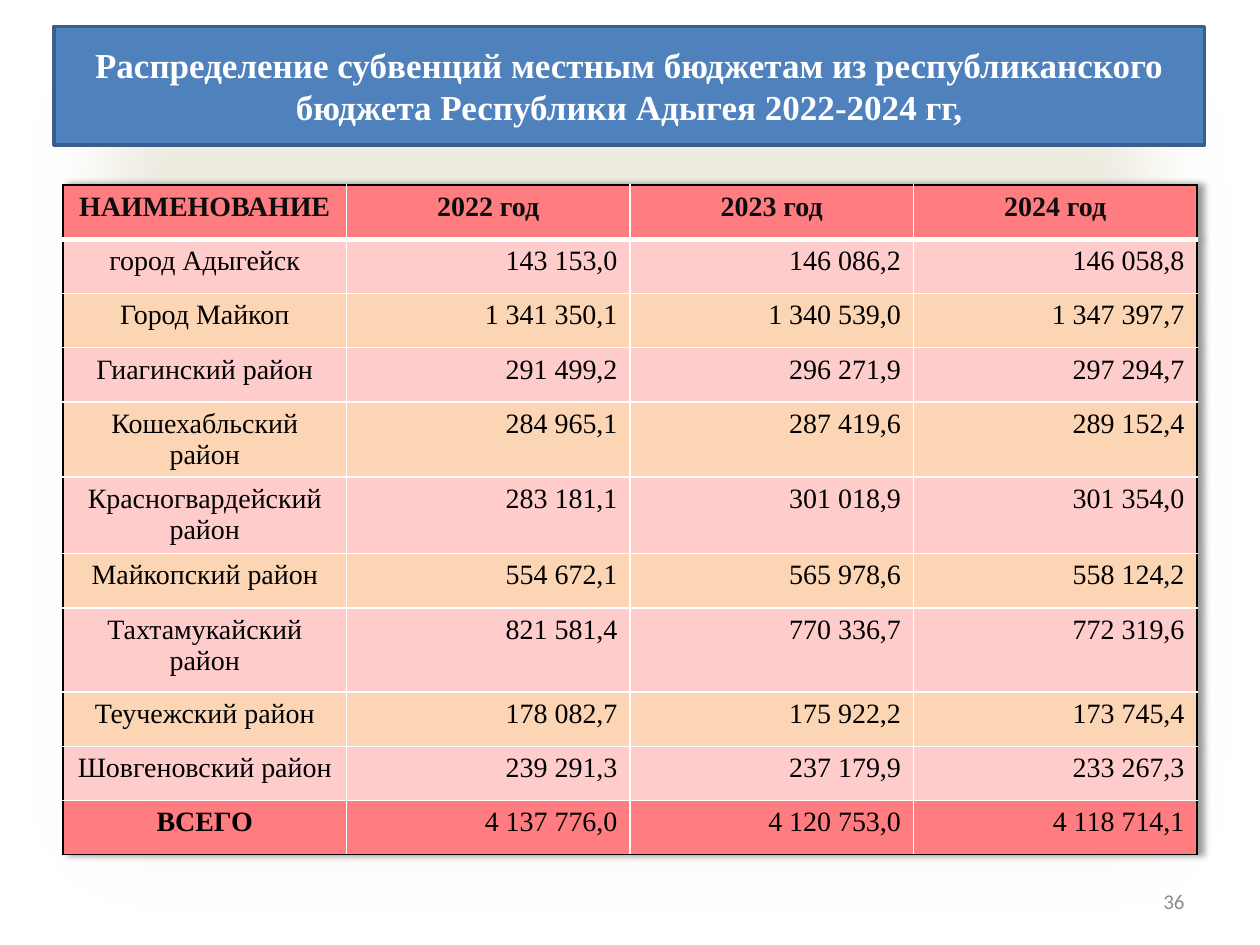
"""Builds the slide on subventions to the local budgets of Adygea, 2022-2024."""
from dataclasses import dataclass

from lxml.etree import SubElement
from pptx import Presentation
from pptx.dml.color import RGBColor
from pptx.enum.shapes import MSO_SHAPE as Preset
from pptx.enum.text import MSO_ANCHOR as Anchor, PP_ALIGN as Align
from pptx.oxml import parse_xml
from pptx.oxml.ns import nsdecls, qn
from pptx.util import Inches, Pt

SERIF = "Times New Roman"
WHITE, BLACK, CORAL, PINK, PEACH = "FFFFFF", "000000", "FF7C80", "FFCCCC", "FCD5B5"
YEARS = (2022, 2023, 2024)
ROW_HEIGHT = 0.43


@dataclass
class Row:
    name: str
    values: tuple[str, ...]
    height: float = ROW_HEIGHT


DISTRICTS = [
    Row("город Адыгейск", ("143 153,0", "146 086,2", "146 058,8")),
    Row("Город Майкоп", ("1 341 350,1", "1 340 539,0", "1 347 397,7")),
    Row("Гиагинский район", ("291 499,2", "296 271,9", "297 294,7")),
    Row("Кошехабльский район", ("284 965,1", "287 419,6", "289 152,4"), 0.57),
    Row("Красногвардейский район", ("283 181,1", "301 018,9", "301 354,0"), 0.61),
    Row("Майкопский район", ("554 672,1", "565 978,6", "558 124,2")),
    Row("Тахтамукайский район", ("821 581,4", "770 336,7", "772 319,6"), 0.67),
    Row("Теучежский район", ("178 082,7", "175 922,2", "173 745,4")),
    Row("Шовгеновский район", ("239 291,3", "237 179,9", "233 267,3")),
]
HEADER = Row("НАИМЕНОВАНИЕ", tuple(f"{year} год" for year in YEARS))
TOTAL = Row("ВСЕГО", ("4 137 776,0", "4 120 753,0", "4 118 714,1"))


def rgb(value: str) -> RGBColor:
    return RGBColor.from_string(value)


def paint(target, color: str) -> None:
    target.fill.solid()
    target.fill.fore_color.rgb = rgb(color)


def write(frame, text: str, align, size: float, color: str, bold=False, font=SERIF) -> None:
    paragraph = frame.paragraphs[0]
    paragraph.alignment = align
    run = paragraph.add_run()
    run.text = text
    for attribute, value in {"size": Pt(size), "bold": bold, "name": font}.items():
        setattr(run.font, attribute, value)
    run.font.color.rgb = rgb(color)


def add_panel(slide, box: tuple[float, ...], color: str):
    panel = slide.shapes.add_shape(Preset.RECTANGLE, *map(Inches, box))
    panel.shadow.inherit = False
    paint(panel, color)
    panel.line.fill.background()
    return panel


def set_borders(cell, borders: dict[str, tuple[str, float]]) -> None:
    properties = cell._tc.get_or_add_tcPr()
    for position, (side, (color, width)) in enumerate(borders.items()):
        properties.insert(position, parse_xml(
            f'<a:ln{side} {nsdecls("a")} w="{Pt(width)}"><a:solidFill>'
            f'<a:srgbClr val="{color}"/></a:solidFill></a:ln{side}>'))


def add_backdrop(slide) -> None:
    backdrop = add_panel(slide, (0, 0, 10, 7.5), "EEECE1")
    effects = backdrop._element.spPr.find(qn("a:effectLst"))
    SubElement(effects, qn("a:softEdge"), rad=str(Inches(0.69)))


def add_budget_table(slide) -> None:
    rows = [HEADER, *DISTRICTS, TOTAL]
    last_row, last_column = len(rows) - 1, len(YEARS)
    table = slide.shapes.add_table(
        len(rows), last_column + 1, Inches(0.5), Inches(1.47), Inches(9),
        Inches(sum(row.height for row in rows))).table
    table.horz_banding = False
    table._tbl.tblPr.insert(0, parse_xml(
        f'<a:effectLst {nsdecls("a")}><a:outerShdw blurRad="50800" dist="38100" '
        'algn="l" rotWithShape="0"><a:srgbClr val="000000"><a:alpha val="40000"/>'
        '</a:srgbClr></a:outerShdw></a:effectLst>'))
    for r, row in enumerate(rows):
        table.rows[r].height = Inches(row.height)
        is_header, is_total = r == 0, r == last_row
        color = CORAL if is_header or is_total else (PINK if r % 2 else PEACH)
        for c, text in enumerate((row.name, *row.values)):
            cell = table.cell(r, c)
            paint(cell, color)
            write(cell.text_frame, text,
                  Align.CENTER if is_header or c == 0 else Align.RIGHT,
                  16, "0D0D0D" if is_header else BLACK,
                  is_header or (is_total and c == 0))
            set_borders(cell, {
                "L": (BLACK if c == 0 else WHITE, 1),
                "R": (BLACK if c == last_column else WHITE, 1),
                "T": (BLACK if is_header else WHITE, 3 if r == 1 else 1),
                "B": (BLACK if is_total else WHITE, 3 if is_header else 1),
            })


def add_title(slide) -> None:
    title = add_panel(slide, (0.43, 0.21, 9.13, 0.94), "4F81BD")
    title.line.color.rgb = rgb("3A5F8C")
    title.line.width = Pt(2)
    title.text_frame.word_wrap = True
    title.text_frame.vertical_anchor = Anchor.MIDDLE
    write(title.text_frame,
          "Распределение субвенций местным бюджетам из республиканского "
          "бюджета Республики Адыгея 2022-2024 гг,",
          Align.CENTER, 20, WHITE, True)


def add_page_number(slide) -> None:
    number = slide.shapes.add_textbox(*map(Inches, (7.17, 6.95, 2.33, 0.4))).text_frame
    number.word_wrap = True
    number.vertical_anchor = Anchor.MIDDLE
    write(number, "36", Align.RIGHT, 12, "8C8C8C", font="Calibri")


def main() -> None:
    deck = Presentation()
    deck.slide_width, deck.slide_height = Inches(10), Inches(7.5)
    slide = deck.slides.add_slide(deck.slide_layouts[6])
    add_backdrop(slide)
    add_budget_table(slide)
    add_title(slide)
    add_page_number(slide)
    deck.save("out.pptx")


if __name__ == "__main__":
    main()
